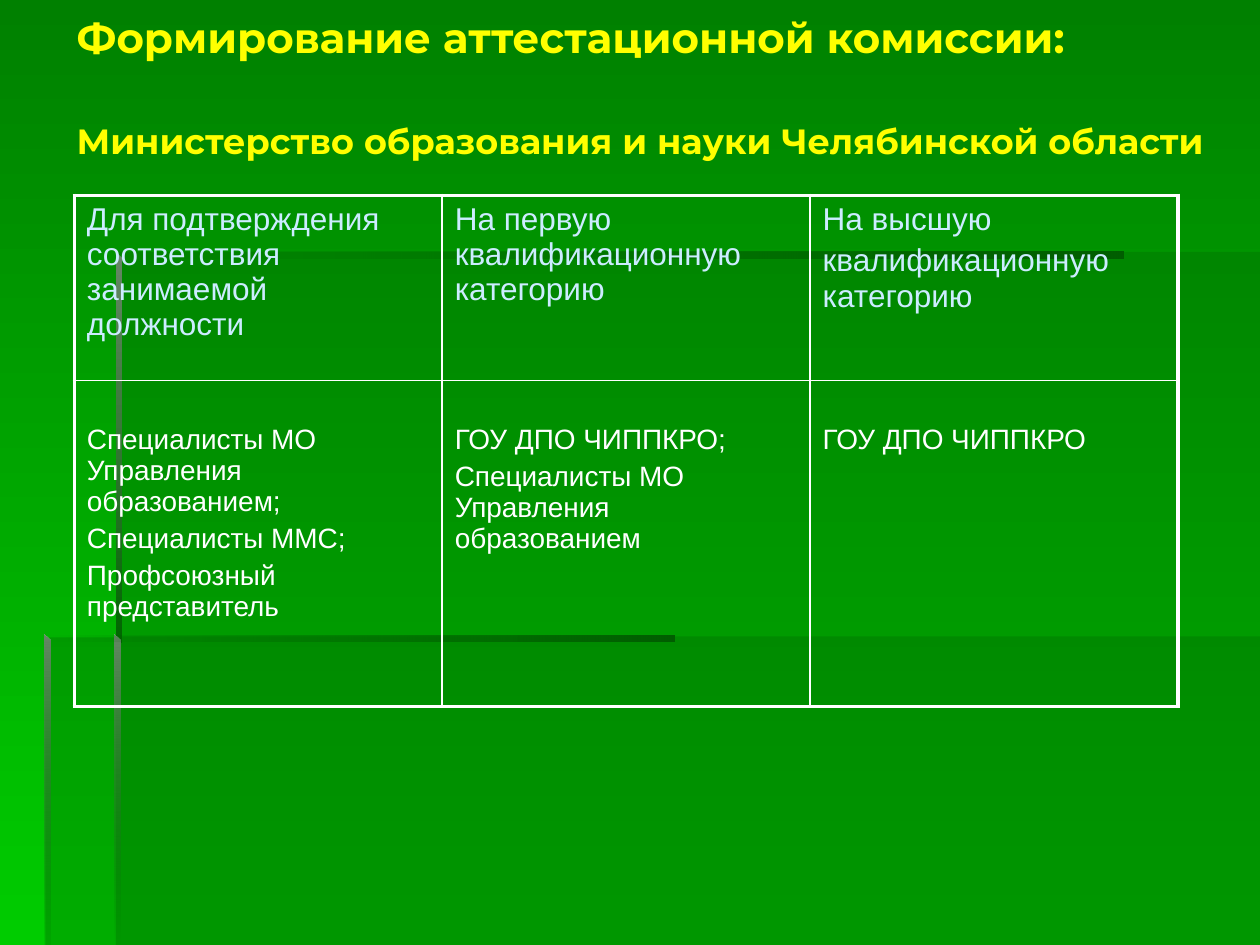
from typing import NamedTuple, Optional

from lxml.etree import SubElement as Sub
from pptx import Presentation
from pptx.dml.color import RGBColor
from pptx.enum.text import MSO_ANCHOR as Anchor
from pptx.oxml.ns import qn
from pptx.util import Inches, Pt

DARK = RGBColor(0x00, 0x66, 0x00)
DEEP = RGBColor(0x00, 0x5E, 0x00)
GRAY = RGBColor(0x66, 0x86, 0x66)
GREEN = RGBColor(0x00, 0x80, 0x00)
LIME = RGBColor(0x00, 0xCC, 0x00)
YELLOW = RGBColor(0xFF, 0xFF, 0x00)
PALE = RGBColor(0xCC, 0xEC, 0xFF)
WHITE = RGBColor(0xFF, 0xFF, 0xFF)

DOWN, ACROSS = 270, 0


class Stop(NamedTuple):
    color: RGBColor
    alpha: int = 100


class Part(NamedTuple):
    points: list
    first: Stop
    last: Optional[Stop] = None
    angle: int = DOWN


class Row(NamedTuple):
    height: float
    size: int
    color: RGBColor
    top: float
    cells: list


HAZE = Stop(DARK, 30)
CLEAR = Stop(DARK, 0)


def slab(left: float, top: float, width: float) -> Part:
    """Horizontal bar that fades in from the left."""
    right, low = left + width, top + 0.05
    points = [(left, top), (left, low), (right, low), (right, top)]
    return Part(points, CLEAR, Stop(DEEP), ACROSS)


def post(left: float, top: float, low: float, last: Stop) -> Part:
    """Vertical bar with a mitred top."""
    right = left + 0.05
    points = [(left, top), (left, low), (right, low), (right, top + 0.05)]
    return Part(points, Stop(GRAY), last)


PARTS = [
    Part([(0.92, 5.05), (0.92, 7.5), (10, 7.5), (10, 5.05)], HAZE),
    Part([(0.94, 5.06), (0.36, 5.06), (0.36, 7.5), (10, 7.5), (10, 2),
          (0.94, 2)], HAZE),
    slab(0.92, 2, 8),
    post(0.92, 2, 5.1, Stop(DARK)),
    post(0.91, 5.04, 7.5, CLEAR),
    slab(0.35, 5.04, 5),
    post(0.35, 5.04, 7.5, Stop(DARK, 10)),
]

TITLE = [("Формирование аттестационной комиссии:", 24, 0),
         ("Министерство образования и науки Челябинской области", 20, 33)]

ROWS = [
    Row(1.47, 18, PALE, 0.05, [
        ["Для подтверждения соответствия занимаемой должности"],
        ["На первую квалификационную категорию"],
        ["На высшую", "квалификационную категорию"]]),
    Row(2.59, 16, WHITE, 0.35, [
        ["Специалисты МО Управления образованием;", "Специалисты ММС;",
         "Профсоюзный представитель"],
        ["ГОУ ДПО ЧИППКРО;", "Специалисты МО Управления образованием"],
        ["ГОУ ДПО ЧИППКРО"]]),
]


def fade(clr, alpha: int) -> None:
    """Set the opacity of a colour element, in percent."""
    if alpha < 100:
        Sub(clr, qn("a:alpha"), val=str(alpha * 1000))


def blend(fill, first: Stop, last: Stop, angle: int) -> None:
    fill.gradient()
    fill.gradient_angle = angle
    for stop, (color, alpha), place in zip(fill.gradient_stops,
                                           (first, last), (0, 1)):
        stop.color.rgb = color
        stop.position = place


def draw_part(slide, part: Part) -> None:
    start, *rest = [(Inches(x), Inches(y)) for x, y in part.points]
    form = slide.shapes.build_freeform(*start)
    form.add_line_segments(rest, close=True)
    shape = form.convert_to_shape()
    shape.shadow.inherit = False
    shape.line.fill.background()
    if part.last:
        blend(shape.fill, part.first, part.last, part.angle)
    else:
        shape.fill.solid()
        shape.fill.fore_color.rgb = part.first.color
    stops = [stop for stop in (part.first, part.last) if stop]
    colors = shape.fill._xPr.iter(qn("a:srgbClr"))
    for clr, stop in zip(colors, stops):
        fade(clr, stop.alpha)


def style(para, size: int, color: RGBColor, face: str, gap: float,
          bold: bool = False) -> None:
    para.space_before = Pt(gap)
    for run in para.runs:
        font = run.font
        font.size, font.name, font.bold = Pt(size), face, bold
        font.color.rgb = color


def draw_title(slide) -> None:
    box = slide.shapes.add_textbox(Inches(0.51), Inches(0.28),
                                   Inches(9.17), Inches(0.81))
    frame = box.text_frame
    frame.word_wrap = True
    frame.vertical_anchor = Anchor.MIDDLE
    frame.margin_right = 0
    frame.text = "\n".join(text for text, _, _ in TITLE)
    for para, (_, size, gap) in zip(frame.paragraphs, TITLE):
        style(para, size, YELLOW, "Montserrat", gap, True)


def edge(cell, side: str, width: float) -> None:
    props = cell._tc.get_or_add_tcPr()
    line = Sub(props, qn(f"a:ln{side}"), w=str(Pt(width)))
    Sub(Sub(line, qn("a:solidFill")), qn("a:srgbClr"), val=str(WHITE))


def draw_table(slide) -> None:
    count = len(ROWS[0].cells)
    high = sum(row.height for row in ROWS)
    table = slide.shapes.add_table(len(ROWS), count, Inches(0.59),
                                   Inches(1.55), Inches(2.92 * count),
                                   Inches(high)).table
    table.first_row = table.horz_banding = False
    for r, row in enumerate(ROWS):
        table.rows[r].height = Inches(row.height)
        for c, lines in enumerate(row.cells):
            cell = table.cell(r, c)
            # Thick outer frame, thin inner rules
            outer = {"L": c == 0, "R": c == count - 1,
                     "T": r == 0, "B": r == len(ROWS) - 1}
            for side, thick in outer.items():
                edge(cell, side, 2.25 if thick else 1)
            cell.fill.background()
            cell.margin_top = Inches(row.top)
            cell.text_frame.text = "\n".join(lines)
            for i, para in enumerate(cell.text_frame.paragraphs):
                style(para, row.size, row.color, "Arial",
                      0.2 * row.size if i else 0)


def main() -> None:
    deck = Presentation()
    deck.slide_width, deck.slide_height = Inches(10), Inches(7.5)
    slide = deck.slides.add_slide(deck.slide_layouts[6])

    # Backdrop
    blend(slide.background.fill, Stop(GREEN), Stop(LIME), DOWN)
    for part in PARTS:
        draw_part(slide, part)

    # Content
    draw_title(slide)
    draw_table(slide)
    deck.save("out.pptx")


if __name__ == "__main__":
    main()
